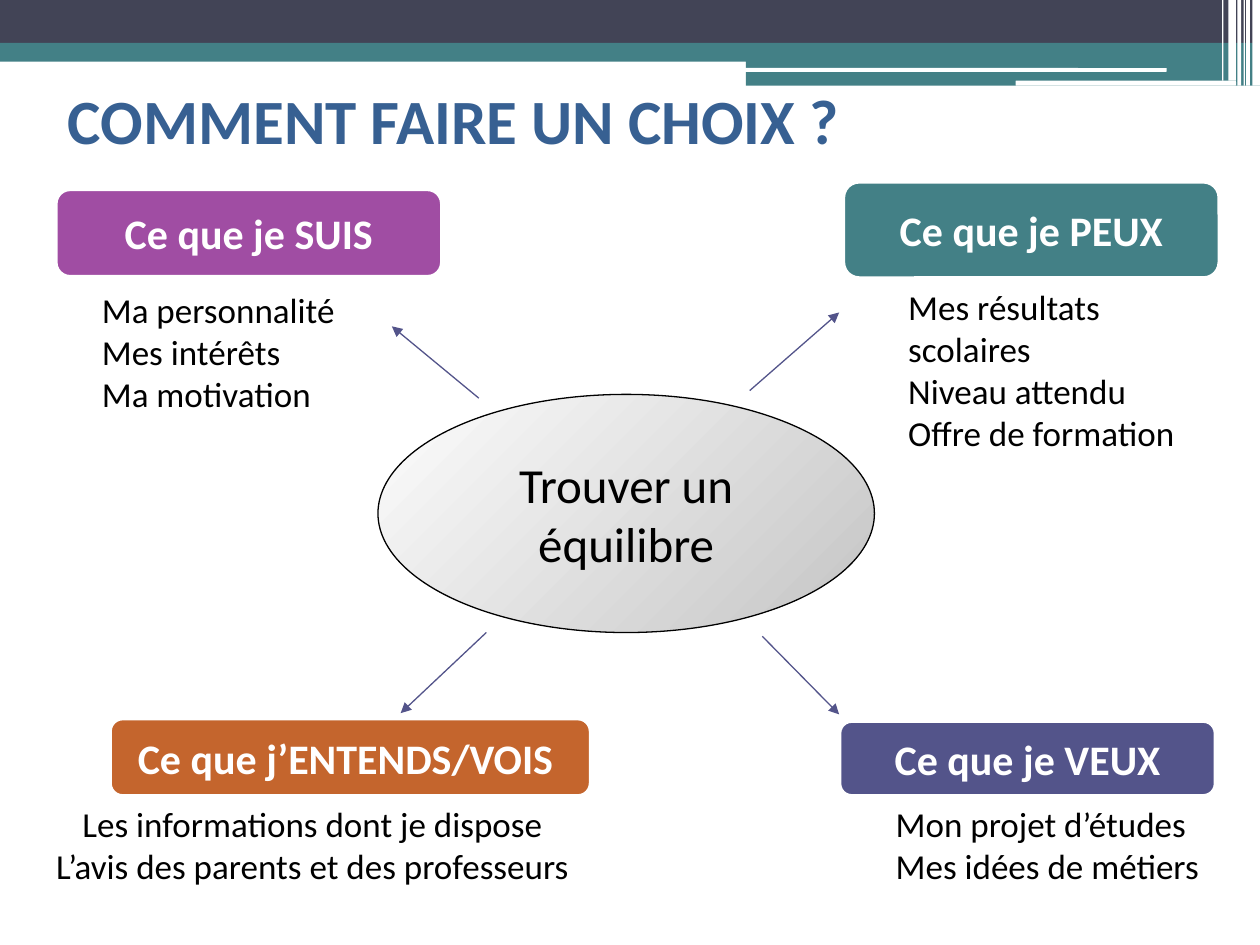
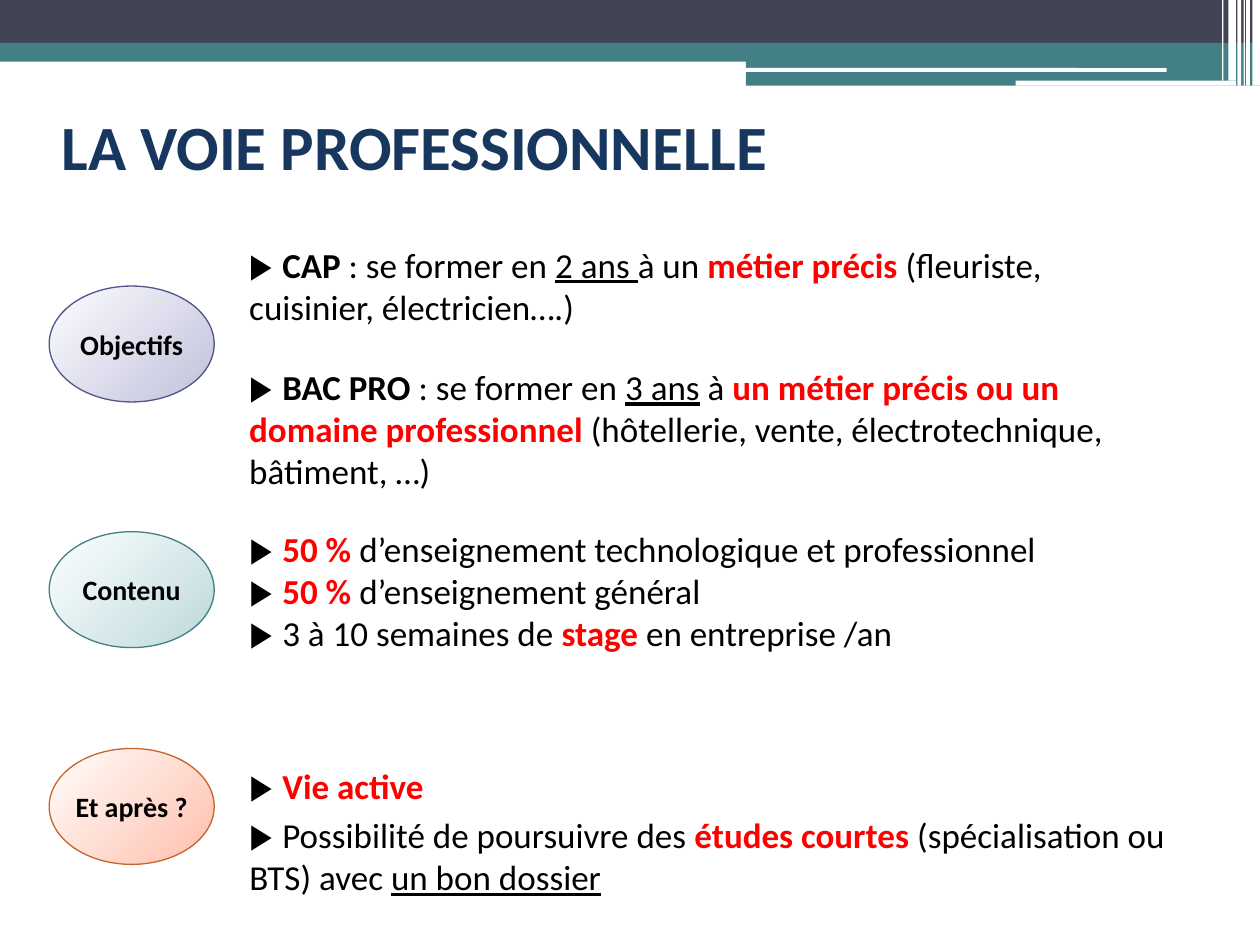
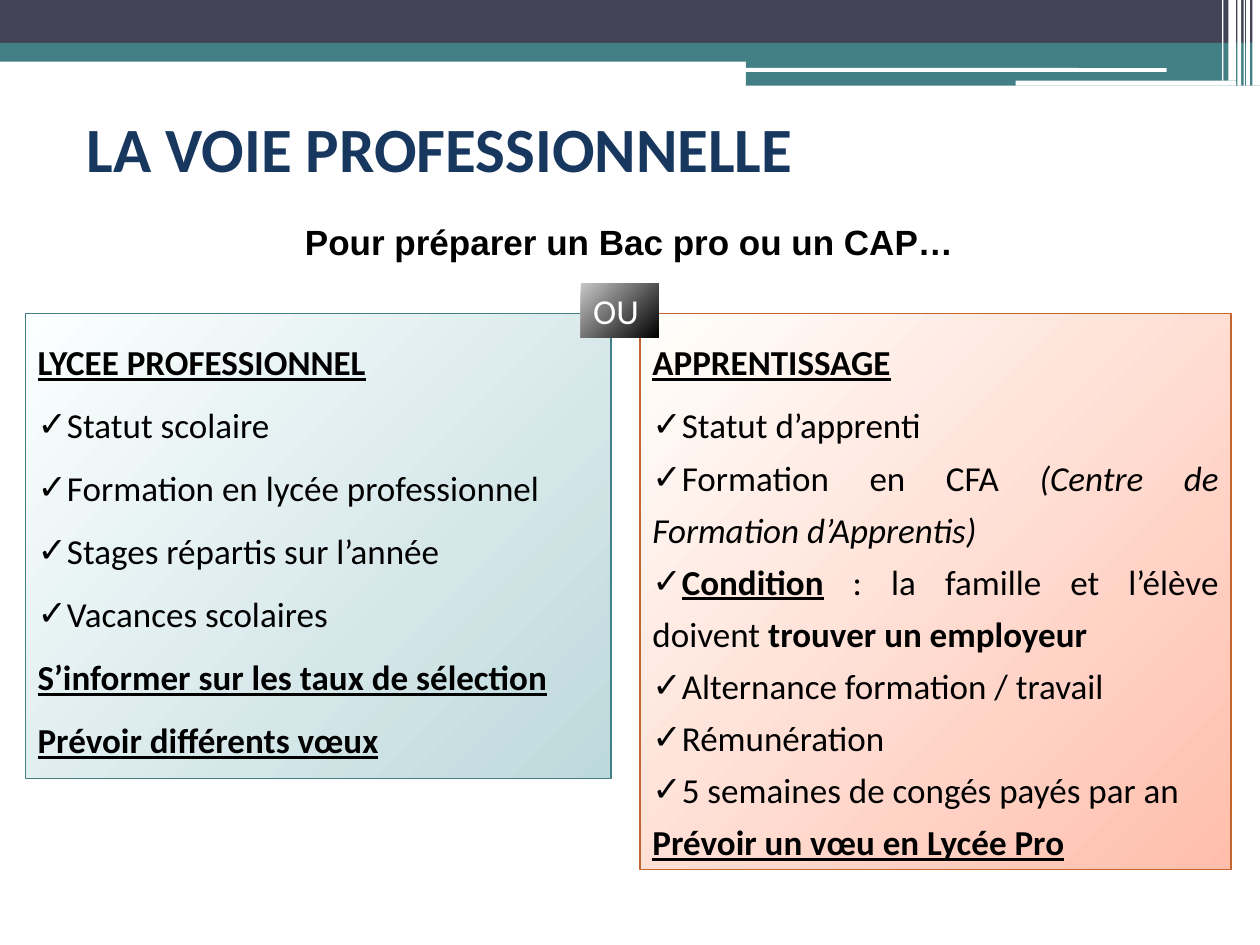
from lxml.etree import SubElement
from pptx import Presentation
from pptx.dml.color import RGBColor
from pptx.enum.shapes import MSO_CONNECTOR, MSO_SHAPE
from pptx.enum.text import MSO_ANCHOR, PP_ALIGN
from pptx.oxml.ns import qn
from pptx.util import Pt

EMU_PER_PX = 9144  # 100 px to the inch
SLIDE_WIDTH, SLIDE_HEIGHT = 1000, 750

BLACK = RGBColor(0x00, 0x00, 0x00)
WHITE = RGBColor(0xFF, 0xFF, 0xFF)
RED = RGBColor(0xFF, 0x00, 0x00)
SLATE = RGBColor(0x42, 0x44, 0x56)
TEAL = RGBColor(0x43, 0x80, 0x86)
INDIGO = RGBColor(0x53, 0x54, 0x8A)
ORANGE = RGBColor(0xC4, 0x65, 0x2D)
PURPLE = RGBColor(0xA0, 0x4D, 0xA3)
BLUE = RGBColor(0x37, 0x60, 0x92)
NAVY = RGBColor(0x17, 0x37, 0x5E)

GREY_GRADIENT = (RGBColor(0xFD, 0xFD, 0xFD), RGBColor(0xC4, 0xC4, 0xC4))
DARK_GRADIENT = (RGBColor(0xC7, 0xC7, 0xC7), BLACK)
INDIGO_GRADIENT = (RGBColor(0xFC, 0xFC, 0xFF), RGBColor(0xC1, 0xC1, 0xDC))
TEAL_GRADIENT = (RGBColor(0xFC, 0xFF, 0xFF), RGBColor(0xBE, 0xD9, 0xDC))
ORANGE_GRADIENT = (RGBColor(0xFF, 0xFF, 0xFC), RGBColor(0xFF, 0xBE, 0xAC))

BOLD = {"bold": True}
UNDERLINE = {"underline": True}
ITALIC = {"italic": True}
STRONG = {"bold": True, "underline": True}
KEY = {"bold": True, "color": RED}
ARROW = ("▶ ", {"font": "Arial"})


def px(length):
    return length * EMU_PER_PX


def add_run(paragraph, text, font="Calibri", size=20, color=BLACK,
            bold=False, italic=False, underline=False):
    run = paragraph.add_run()
    run.text = text
    run.font.name = font
    run.font.size = Pt(size)
    run.font.color.rgb = color
    run.font.bold = bold
    run.font.italic = italic
    run.font.underline = underline


def add_paragraph(frame, runs, align=PP_ALIGN.LEFT, line_spacing=None,
                  space_before=0, bullet=None, **text_format):
    """Write runs, each a string or a (string, format) pair, as one paragraph."""
    paragraph = frame.paragraphs[0]
    if paragraph.runs:
        paragraph = frame.add_paragraph()
    paragraph.alignment = align
    if line_spacing:
        paragraph.line_spacing = line_spacing
    if space_before:
        paragraph.space_before = Pt(space_before)
    if bullet:
        properties = paragraph._p.get_or_add_pPr()
        SubElement(properties, qn("a:buFont"), typeface="Arial")
        SubElement(properties, qn("a:buChar"), char=bullet)
    for run in [runs] if isinstance(runs, str) else runs:
        text, extra = (run, {}) if isinstance(run, str) else run
        add_run(paragraph, text, **{**text_format, **extra})


class Deck:
    """Holds the presentation, its shared layout and the current slide."""

    def __init__(self):
        self.presentation = Presentation()
        self.presentation.slide_width = px(SLIDE_WIDTH)
        self.presentation.slide_height = px(SLIDE_HEIGHT)
        self.layout = self.presentation.slide_layouts[6]
        for placeholder in list(self.layout.placeholders):
            placeholder.element.getparent().remove(placeholder.element)
        self.slide = None

    def new_slide(self):
        self.slide = self.presentation.slides.add_slide(self.layout)

    def share_shapes(self):
        """Move the shapes of the current slide to the layout."""
        for shape in list(self.slide.shapes):
            self.layout.shapes.element.append(shape.element)

    def shape(self, kind, box, fill, line=None, line_width=0.75):
        """Add a preset shape; a pair of colours as fill makes a diagonal gradient."""
        shape = self.slide.shapes.add_shape(kind, *map(px, box))
        shape.shadow.inherit = False
        if isinstance(fill, RGBColor):
            shape.fill.solid()
            shape.fill.fore_color.rgb = fill
        else:
            shape.fill.gradient()
            shape.fill.gradient_angle = 315
            for stop, color in zip(shape.fill.gradient_stops, fill):
                stop.color.rgb = color
        if line is None:
            shape.line.fill.background()
        else:
            shape.line.color.rgb = line
            shape.line.width = Pt(line_width)
        return shape

    def label(self, kind, box, text, fill, line=None, line_width=0.75, wrap=True, **text_format):
        shape = self.shape(kind, box, fill, line, line_width)
        frame = shape.text_frame
        frame.word_wrap = wrap
        frame.vertical_anchor = MSO_ANCHOR.MIDDLE
        add_paragraph(frame, text, **{"align": PP_ALIGN.CENTER, **text_format})

    def panel(self, box, fill, line, paragraphs):
        """Add a framed list of (runs, format) paragraphs."""
        frame = self.shape(MSO_SHAPE.RECTANGLE, box, fill, line).text_frame
        frame.word_wrap = True
        frame.vertical_anchor = MSO_ANCHOR.TOP
        for runs, paragraph_format in paragraphs:
            add_paragraph(frame, runs, **paragraph_format)

    def text(self, box, paragraphs, wrap=True, gap=0, **text_format):
        frame = self.slide.shapes.add_textbox(*map(px, box)).text_frame
        frame.word_wrap = wrap
        for index, runs in enumerate(paragraphs):
            add_paragraph(frame, runs, space_before=gap if index else 0, **text_format)

    def title(self, box, text, color=NAVY):
        self.text(box, [text], wrap=False, size=36, color=color, bold=True)

    def arrow(self, start, end):
        connector = self.slide.shapes.add_connector(
            MSO_CONNECTOR.STRAIGHT, *map(px, start + end))
        connector.line.color.rgb = INDIGO
        connector.line.width = Pt(0.75)
        SubElement(connector.line._get_or_add_ln(), qn("a:tailEnd"), type="triangle")
        SubElement(connector.element.spPr, qn("a:effectLst"))


def draw_header(deck):
    bands = [
        ((0, 40, SLIDE_WIDTH, 9), TEAL),
        ((0, 0, SLIDE_WIDTH, 34), SLATE),
        ((0, 34, SLIDE_WIDTH, 10), TEAL),
        ((592, 39, 408, 10), TEAL),
        ((592, 48, 408, 20), TEAL),
    ]
    for box, color in bands:
        deck.shape(MSO_SHAPE.RECTANGLE, box, color)
    for box in [(591, 54, 335, 3), (806, 64, 175, 4)]:
        deck.shape(MSO_SHAPE.ROUNDED_RECTANGLE, box, WHITE)
    stripes = [(994, 6, 68), (989, 3, 68), (987, 1, 68),
               (982, 3, 68), (975, 6, 64), (970, 1, 64)]
    for left, width, height in stripes:
        deck.shape(MSO_SHAPE.RECTANGLE, (left, 0, width, height), WHITE)


def draw_choice(deck):
    deck.title((44, 60, 722, 70), "COMMENT FAIRE UN CHOIX ?", BLUE)
    deck.label(MSO_SHAPE.OVAL, (300, 313, 394, 189), "Trouver un équilibre",
               GREY_GRADIENT, BLACK, size=28)

    headings = [
        ((44, 150, 307, 70), "Ce que je SUIS", PURPLE),
        ((666, 572, 299, 60), "Ce que je VEUX", INDIGO),
        ((87, 570, 382, 62), "Ce que j’ENTENDS/VOIS ", ORANGE),
        ((669, 144, 299, 77), "Ce que je PEUX", TEAL),
    ]
    for box, text, color in headings:
        deck.label(MSO_SHAPE.ROUNDED_RECTANGLE, box, text, color, WHITE, 2.5,
                   size=24, color=WHITE, bold=True)

    deck.text((-2, 632, 500, 77),
              ["Les informations dont je dispose", "L’avis des parents et des professeurs"],
              align=PP_ALIGN.CENTER)
    deck.text((701, 632, 299, 77), ["Mon projet d’études", "Mes idées de métiers"])
    deck.text((71, 224, 228, 110), ["Ma personnalité", "Mes intérêts", "Ma motivation"])
    deck.text((711, 222, 261, 143),
              ["Mes résultats scolaires", "Niveau attendu", "Offre de formation"])

    deck.arrow((380, 316), (311, 259))
    deck.arrow((595, 310), (666, 248))
    deck.arrow((386, 502), (318, 566))
    deck.arrow((605, 505), (666, 567))


def draw_vocational_path(deck):
    topics = [
        (227, "Objectifs", INDIGO_GRADIENT, INDIGO),
        (422, "Contenu", TEAL_GRADIENT, TEAL),
        (594, "Et après ?", ORANGE_GRADIENT, ORANGE),
    ]
    for top, text, fill, line in topics:
        deck.label(MSO_SHAPE.OVAL, (39, top, 131, 92), text, fill, line,
                   wrap=False, size=16, bold=True)

    deck.text((188, 188, 754, 244), [
        [ARROW, ("CAP ", BOLD), ": se former en ", ("2 ans ", UNDERLINE), "à un ",
         ("métier précis ", KEY), "(fleuriste, cuisinier, électricien….)"],
        [ARROW, ("BAC PRO ", BOLD), ": se former en ", ("3 ans", UNDERLINE), " à ",
         ("un métier précis ou un domaine professionnel ", KEY),
         "(hôtellerie, vente, électrotechnique, bâtiment, …)"],
    ], gap=22)
    deck.text((188, 414, 715, 177), [
        [ARROW, ("50 % ", KEY), "d’enseignement technologique et professionnel"],
        [ARROW, ("50 % ", KEY), "d’enseignement général"],
        [ARROW, "3 à 10 semaines de ", ("stage", KEY), " en entreprise /an"],
    ])
    deck.text((188, 602, 615, 44), [[ARROW, ("Vie active", KEY)]])
    deck.text((188, 641, 769, 77), [
        [ARROW, "Possibilité de poursuivre des ", ("études courtes ", KEY),
         "(spécialisation ou BTS) avec ", ("un bon dossier", UNDERLINE)],
    ])
    deck.title((39, 80, 586, 71), "LA VOIE PROFESSIONNELLE")


def draw_school_or_apprenticeship(deck):
    deck.text((35, 170, 929, 44), ["Pour préparer un Bac pro ou un CAP…"],
              align=PP_ALIGN.CENTER, font="Arial", bold=True)

    wide = {"line_spacing": 1.5}
    wide_strong = {**wide, **STRONG}
    wide_check = {**wide, "bullet": "✓"}
    tight = {"line_spacing": 1.24, "align": PP_ALIGN.JUSTIFY}
    tight_check = {**tight, "bullet": "✓"}

    deck.panel((508, 249, 469, 441), ORANGE_GRADIENT, ORANGE, [
        ("APPRENTISSAGE", wide_strong),
        ("Statut d’apprenti", {**wide_check, "align": PP_ALIGN.JUSTIFY}),
        (["Formation en CFA ", ("(Centre de Formation d’Apprentis)", ITALIC)], tight_check),
        ([("Condition", STRONG), " : la famille et l’élève doivent ",
          ("trouver un employeur", BOLD)], tight_check),
        ("Alternance formation / travail", tight_check),
        ("Rémunération", tight_check),
        ("5 semaines de congés payés par an", tight_check),
        ("Prévoir un vœu en Lycée Pro", {**tight, **STRONG}),
    ])
    deck.panel((20, 249, 465, 369), TEAL_GRADIENT, TEAL, [
        ("LYCEE PROFESSIONNEL", wide_strong),
        ("Statut scolaire", wide_check),
        ("Formation en lycée professionnel", wide_check),
        ("Stages répartis sur l’année", wide_check),
        ("Vacances scolaires", wide_check),
        ("S’informer sur les taux de sélection", wide_strong),
        ("Prévoir différents vœux", wide_strong),
    ])
    deck.label(MSO_SHAPE.RECTANGLE, (461, 225, 62, 43), "OU", DARK_GRADIENT,
               align=PP_ALIGN.LEFT, color=WHITE)
    deck.title((59, 82, 586, 71), "LA VOIE PROFESSIONNELLE")


def main():
    deck = Deck()
    deck.new_slide()
    draw_header(deck)
    deck.share_shapes()
    draw_choice(deck)
    deck.new_slide()
    draw_vocational_path(deck)
    deck.new_slide()
    draw_school_or_apprenticeship(deck)
    deck.presentation.save("out.pptx")


if __name__ == "__main__":
    main()
